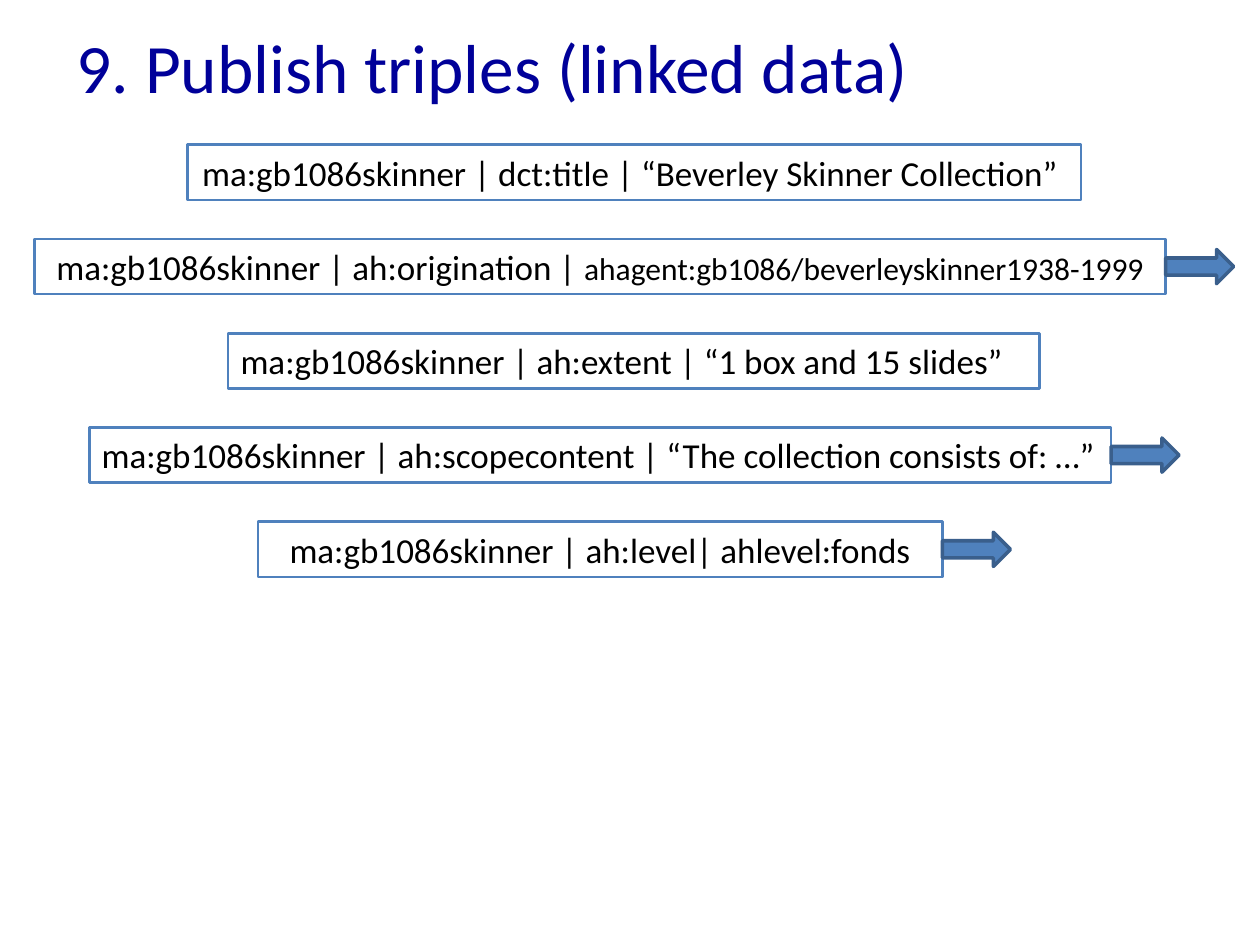
from pptx import Presentation
from pptx.dml.color import RGBColor
from pptx.enum import shapes, text
from pptx.util import Cm, Pt

NAVY = RGBColor(0x00, 0x00, 0x99)
BLACK = RGBColor(0x00, 0x00, 0x00)
BLUE = RGBColor(0x4F, 0x81, 0xBD)
STEEL = RGBColor(0x3A, 0x5F, 0x8C)
FONT = "Calibri"
LEFT, MID = text.PP_ALIGN.LEFT, text.PP_ALIGN.CENTER

TITLE = "9. Publish triples (linked data)"
# left, width, alignment, arrow, runs with sizes
ROWS = [
    (3.78, 18.01, MID, False,
     [("ma:gb1086skinner | dct:title | “Beverley Skinner Collection” ", 20)]),
    (0.7, 22.8, MID, True,
     [("ma:gb1086skinner | ah:origination | ", 20),
      ("ahagent:gb1086/beverleyskinner1938-1999", 18)]),
    (4.6, 16.36, LEFT, False,
     [("ma:gb1086skinner | ah:extent | “1 box and 15 slides”", 20)]),
    (1.8, 20.6, LEFT, True,
     [("ma:gb1086skinner | ah:scopecontent | “The collection consists of: …”", 20)]),
    (5.2, 13.8, MID, True,
     [("ma:gb1086skinner | ah:level| ahlevel:fonds", 20)]),
]
TOP, STEP, HIGH = 2.92, 1.9, 1.11
TIP_W, TIP_H = 1.37, 0.69


def add_title(slide):
    box = slide.shapes.add_textbox(Cm(1.3), Cm(0.33), Cm(22.86), Cm(2))
    frame = box.text_frame
    frame.word_wrap = True
    frame.vertical_anchor = text.MSO_ANCHOR.MIDDLE
    para = frame.paragraphs[0]
    para.text = TITLE
    para.font.name = FONT
    para.font.size = Pt(39.6)
    para.font.color.rgb = NAVY


def add_box(slide, left, top, width, align, runs):
    box = slide.shapes.add_shape(
        shapes.MSO_SHAPE.RECTANGLE, Cm(left), Cm(top), Cm(width), Cm(HIGH))
    box.shadow.inherit = False
    box.fill.background()
    box.line.color.rgb = BLUE
    box.line.width = Pt(1.5)
    frame = box.text_frame
    frame.word_wrap = True
    frame.vertical_anchor = text.MSO_ANCHOR.TOP
    para = frame.paragraphs[0]
    para.alignment = align
    for words, size in runs:
        run = para.add_run()
        run.text = words
        run.font.name = FONT
        run.font.size = Pt(size)
        run.font.color.rgb = BLACK


def add_arrow(slide, left, top):
    tip = slide.shapes.add_shape(
        shapes.MSO_SHAPE.RIGHT_ARROW, Cm(left), Cm(top), Cm(TIP_W), Cm(TIP_H))
    tip.shadow.inherit = False
    tip.fill.solid()
    tip.fill.fore_color.rgb = BLUE
    tip.line.color.rgb = STEEL
    tip.line.width = Pt(2)


def main():
    deck = Presentation()
    deck.slide_width, deck.slide_height = Cm(25.4), Cm(19.05)
    slide = deck.slides.add_slide(deck.slide_layouts[6])
    add_title(slide)
    for i, (left, width, align, arrow, runs) in enumerate(ROWS):
        top = TOP + i * STEP
        add_box(slide, left, top, width, align, runs)
        if arrow:
            add_arrow(slide, left + width, top + (HIGH - TIP_H) / 2)
    deck.save("out.pptx")


if __name__ == "__main__":
    main()
